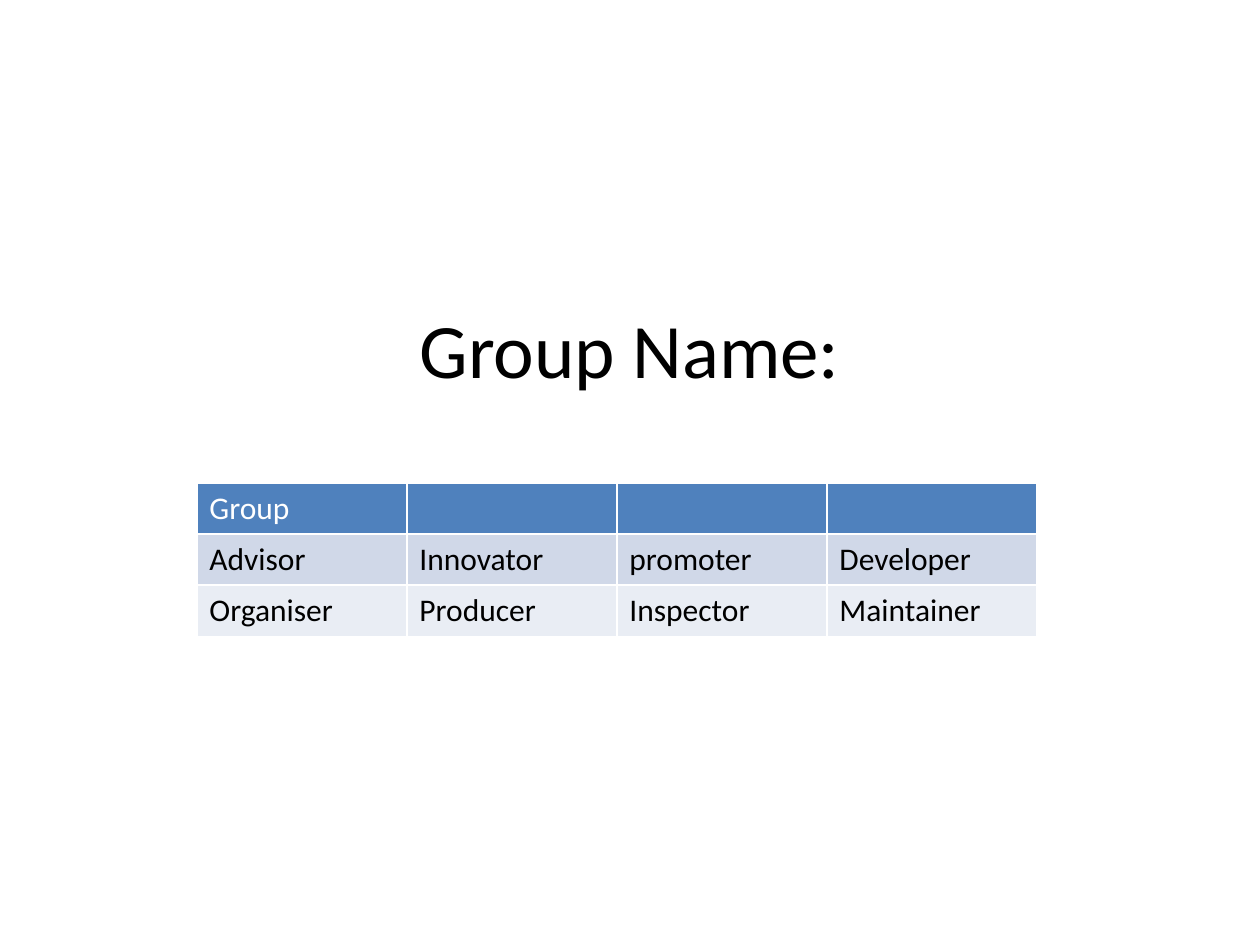
from pptx import Presentation
from pptx.dml.color import RGBColor
from pptx.enum.text import MSO_ANCHOR, PP_ALIGN
from pptx.util import Pt

COLORS = {
    "title": "000000",
    "header_fill": "4F81BD",
    "header_text": "FFFFFF",
    "roles_fill_1": "D0D8E8",
    "roles_fill_2": "E9EDF4",
    "roles_text": "000000",
}


def format_font(font, size, color):
    values = {"name": "Calibri", "size": Pt(size), "bold": False}
    for attribute, value in values.items():
        setattr(font, attribute, value)
    font.color.rgb = RGBColor.from_string(COLORS[color])


prs = Presentation()
prs.slide_width, prs.slide_height = Pt(720), Pt(540)
slide = prs.slides.add_slide(prs.slide_layouts[6])

# Title, raised above the middle of its box by the bottom margin
title = slide.shapes.add_textbox(Pt(54), Pt(167.75), Pt(612), Pt(115.75))
title_format = {
    "word_wrap": True,
    "vertical_anchor": MSO_ANCHOR.MIDDLE,
    "margin_bottom": Pt(57.3),
}
for attribute, value in title_format.items():
    setattr(title.text_frame, attribute, value)
heading = title.text_frame.paragraphs[0]
heading.text = "Group Name:"
heading.alignment = PP_ALIGN.CENTER
format_font(heading.runs[0].font, 44, "title")

# Table of group roles: row texts, fill and text colour
group_rows = [
    (["Group", "", "", ""], "header_fill", "header_text"),
    (["Advisor", "Innovator", "promoter", "Developer"], "roles_fill_1", "roles_text"),
    (["Organiser", "Producer", "Inspector", "Maintainer"], "roles_fill_2", "roles_text"),
]
roles = slide.shapes.add_table(3, 4, Pt(112.5), Pt(276), Pt(480), Pt(87.6)).table

for row, (labels, fill, text_color) in zip(roles.rows, group_rows):
    for cell, label in zip(row.cells, labels):
        cell.fill.solid()
        cell.fill.fore_color.rgb = RGBColor.from_string(COLORS[fill])
        cell.text = label
        format_font(cell.text_frame.paragraphs[0].font, 18, text_color)
        for run in cell.text_frame.paragraphs[0].runs:
            format_font(run.font, 18, text_color)

prs.save("out.pptx")
